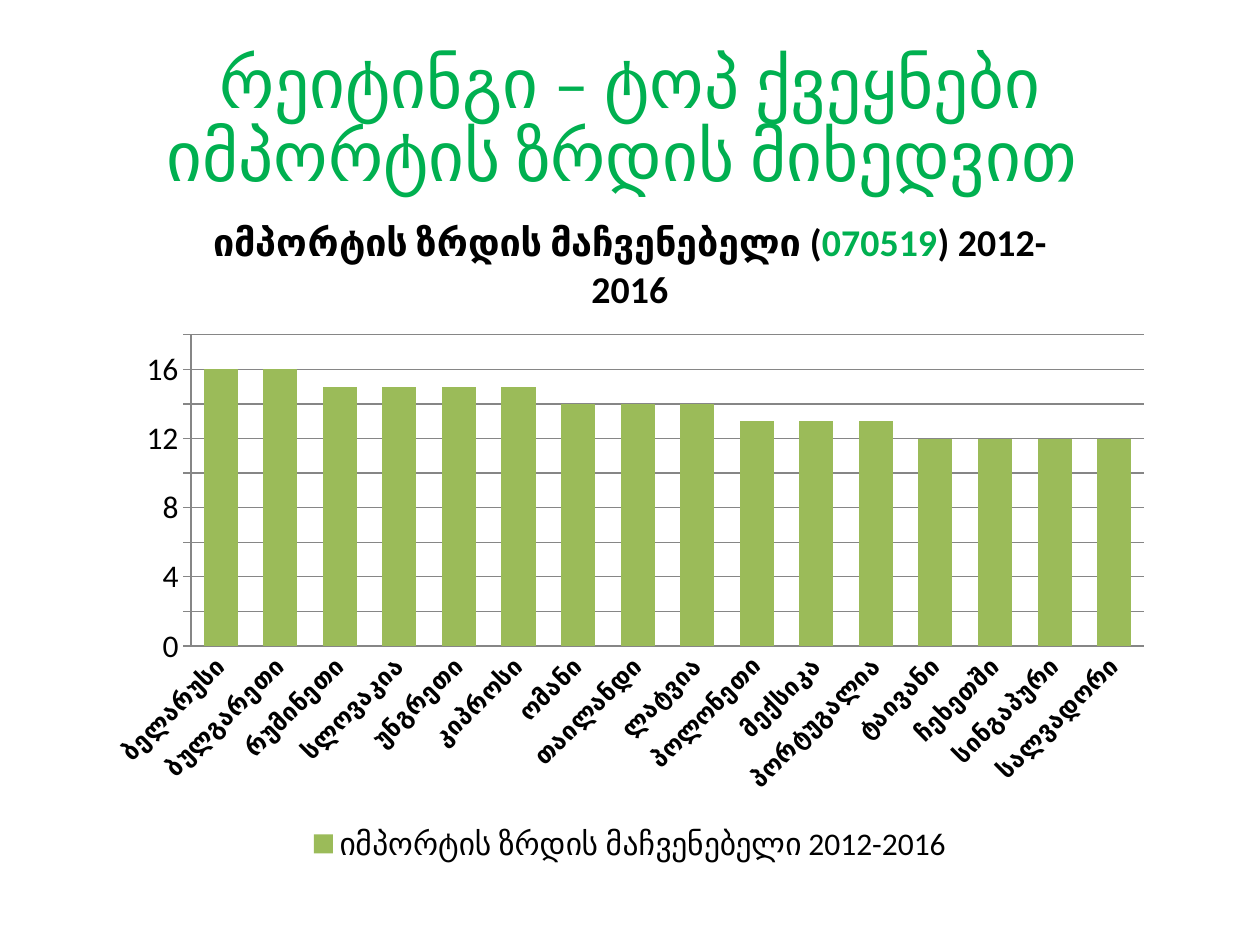
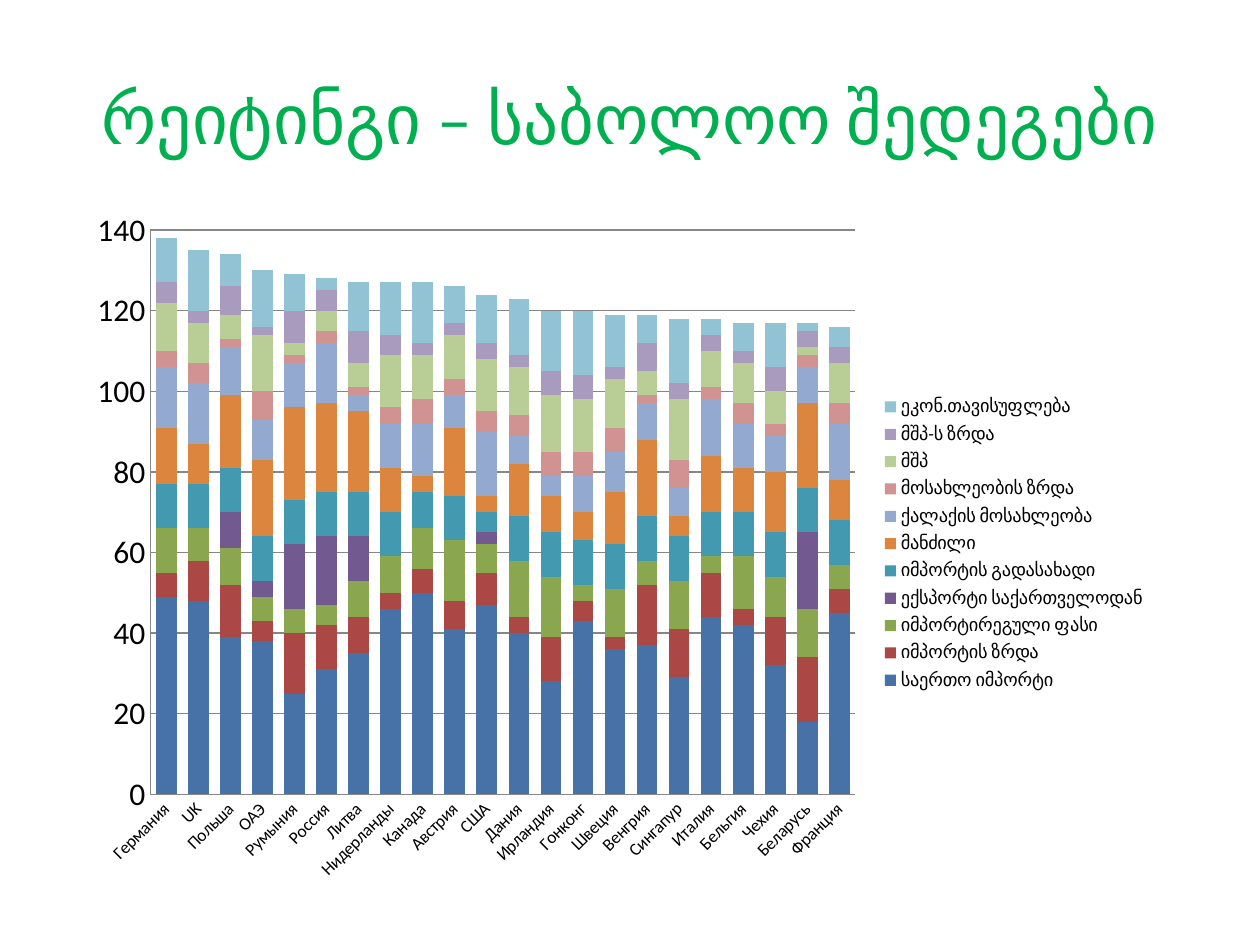
import pptx
import pptx.chart.data
import pptx.dml.color
import pptx.enum.chart
import pptx.enum.text
import pptx.oxml
import pptx.oxml.ns
import pptx.util

Inches, Pt = pptx.util.Inches, pptx.util.Pt
RGBColor = pptx.dml.color.RGBColor
ChartType = pptx.enum.chart.XL_CHART_TYPE
LegendPosition = pptx.enum.chart.XL_LEGEND_POSITION
TickMark = pptx.enum.chart.XL_TICK_MARK

# Shared look
FONT = "Calibri"
GREEN = RGBColor(0x00, 0xB0, 0x50)
BLACK = RGBColor(0x00, 0x00, 0x00)
GRID = RGBColor(0x86, 0x86, 0x86)
OLIVE = RGBColor(0x9B, 0xBB, 0x59)
SCORE_COLORS = [RGBColor.from_string(code) for code in (
    "4672A8", "AB4744", "8AA64F", "725990", "4299B0", "DC853E",
    "93A9CF", "D19392", "B9CD96", "A99BBD", "91C3D5")]

# Rankings list countries from the top score down; each "/" is one point less.

# Import growth content
GROWTH_HEADING = "რეიტინგი – ტოპ ქვეყნები იმპორტის ზრდის მიხედვით "
GROWTH_CAPTION = [("იმპორტის ზრდის მაჩვენებელი (", BLACK), ("070519", GREEN),
                  (") 2012-2016", BLACK)]
GROWTH_NAME = "იმპორტის ზრდის მაჩვენებელი 2012-2016"
GROWTH_TOP = 16
GROWTH_RANKING = (
    "ბელარუსი ბულგარეთი/რუმინეთი სლოვაკია უნგრეთი კიპროსი/ომანი თაილანდი ლატვია/"
    "პოლონეთი მექსიკა პორტუგალია/ტაივანი ჩეხეთში სინგაპური სალვადორი")

# Final results content
RESULTS_HEADING = "რეიტინგი – საბოლოო შედეგები"
RESULT_COUNTRIES = (
    "Германия UK Польша ОАЭ Румыния Россия Литва Нидерланды Канада Австрия США "
    "Дания Ирландия Гонконг Швеция Венгрия Сингапур Италия Бельгия Чехия "
    "Беларусь Франция").split()
# Criterion, top score, ranking, score of unranked countries
CRITERIA = [
    ("საერთო იმპორტი", 50,
     "Канада/Германия/UK/США/Нидерланды/Франция/Италия/Гонконг/Бельгия/Австрия/"
     "Дания/Польша/ОАЭ/Венгрия/Швеция/Литва///Чехия/Россия//Сингапур/Ирландия///"
     "Румыния///////Беларусь", 0),
    ("იმპორტის ზრდა", 16,
     "Беларусь/Румыния Венгрия//Польша/Сингапур Чехия/Россия Ирландия Италия/UK/"
     "Литва/США/Австрия/Германия Канада Франция/ОАЭ Гонконг/"
     "Нидерланды Дания Бельгия/Швеция", 0),
    ("იმპორტირეგული ფასი", 15,
     "Австрия Ирландия/Дания/Бельгия/Швеция Сингапур Беларусь/Германия/"
     "Канада Чехия/Польша Литва Нидерланды/UK/США/ОАЭ Румыния Венгрия Франция/"
     "Россия/Гонконг Италия", 0),
    ("ექსპორტი საქართველოდან", 19,
     "Беларусь//Россия/Румыния/////Литва//Польша/////ОАЭ/США", 0),
    ("იმპორტის გადასახადი", 9, "Канада////США", 11),
    ("მანძილი", 23,
     "Румыния/Россия/Беларусь/Литва/ОАЭ Венгрия/Польша/Австрия//Чехия/"
     "Германия Италия/Дания Швеция//Нидерланды Бельгия/UK Франция/Ирландия//"
     "Гонконг//Сингапур/Канада США", 0),
    ("ქალაქის მოსახლეობა", 16,
     "США/Германия UK Россия/Италия Франция/Канада/Польша/"
     "Румыния Нидерланды Бельгия/ОАЭ Швеция/Гонконг Венгрия Чехия Беларусь/"
     "Австрия/Дания Сингапур//Ирландия/Литва", 0),
    ("მოსახლეობის ზრდა", 7,
     "ОАЭ Сингапур/Канада Ирландия Гонконг Швеция/UK США Дания Бельгия Франция/"
     "Германия Нидерланды Австрия/Россия Италия Чехия Беларусь/"
     "Польша Румыния Литва Венгрия", 0),
    ("მშპ", 15,
     "Сингапур/ОАЭ Ирландия/Нидерланды США Гонконг/Германия Дания Швеция/"
     "Канада Австрия/UK Бельгия Франция/Италия/Чехия//Польша Литва Венгрия/"
     "Россия//Румыния/Беларусь", 0),
    ("მშპ-ს ზრდა", 8,
     "Румыния Литва/Польша Венгрия/Ирландия Гонконг Чехия/"
     "Германия Россия Нидерланды/США Сингапур Италия Беларусь Франция/"
     "UK Канада Австрия Дания Швеция Бельгия/ОАЭ", 0),
    ("ეკონ.თავისუფლება", 16,
     "Гонконг Сингапур/UK Канада Ирландия/ОАЭ Дания/Нидерланды Швеция/Литва США/"
     "Германия Чехия//Румыния Австрия/Польша/Венгрия Бельгия//Франция/Италия/"
     "Россия/Беларусь", 0),
]


def score_ranking(top, ranking):
    """Map each ranked country to its score, one point less per tier."""
    return {country: top - tier
            for tier, countries in enumerate(ranking.split("/"))
            for country in countries.split()}


def style_font(font, size, color=BLACK, bold=False):
    font.name, font.size, font.bold = FONT, Pt(size), bold
    font.color.rgb = color


def write_text(frame, pieces, size, bold=False, line_spacing=None):
    """Fill a text frame with one centred paragraph of (text, color) pieces."""
    paragraph = frame.paragraphs[0]
    paragraph.alignment = pptx.enum.text.PP_ALIGN.CENTER
    if line_spacing:
        paragraph.line_spacing = line_spacing
    for text, color in pieces:
        run = paragraph.add_run()
        run.text = text
        style_font(run.font, size, color, bold)


def add_heading(slide, text, line_spacing=None, margin_top=0.05):
    heading = slide.shapes.add_textbox(Inches(0.5), Inches(0.3), Inches(9), Inches(1.25))
    frame = heading.text_frame
    frame.word_wrap = True
    frame.margin_top = Inches(margin_top)
    frame.vertical_anchor = pptx.enum.text.MSO_ANCHOR.MIDDLE
    write_text(frame, [(text, GREEN)], size=39.6, line_spacing=line_spacing)


def set_plot_area(chart, fractions):
    """Place the inner plot area by x, y, w, h fractions of the chart."""
    parts = "".join(f'<c:{edge}Mode val="edge"/>' for edge in "xy")
    parts += "".join(f'<c:{key} val="{value}"/>' for key, value in zip("xywh", fractions))
    layout = pptx.oxml.parse_xml(
        f'<c:layout {pptx.oxml.ns.nsdecls("c")}><c:manualLayout>'
        f'<c:layoutTarget val="inner"/>{parts}</c:manualLayout></c:layout>')
    plot_area = chart.plots[0]._element.getparent()
    for automatic in plot_area.findall(pptx.oxml.ns.qn("c:layout")):
        plot_area.remove(automatic)
    plot_area.insert(0, layout)


def add_column_chart(slide, kind, box, countries, series, colors, gap, plot_area,
                     top_value, step, tick, country_size, country_bold,
                     legend_position, legend_size):
    data = pptx.chart.data.CategoryChartData(number_format="0")
    data.categories = countries
    for name, values in series.items():
        data.add_series(name, values)
    chart = slide.shapes.add_chart(kind, *map(Inches, box), data).chart
    style_font(chart.font, 18)
    chart.has_title = False

    # Columns
    plot = chart.plots[0]
    plot.vary_by_categories = False
    plot.gap_width = gap
    if kind == ChartType.COLUMN_STACKED:
        plot.overlap = 100
    for column, color in zip(plot.series, colors):
        column.format.fill.solid()
        column.format.fill.fore_color.rgb = color
        column.invert_if_negative = False
    set_plot_area(chart, plot_area)

    # Axes
    country_axis, value_axis = chart.category_axis, chart.value_axis
    value_axis.minimum_scale, value_axis.maximum_scale = 0, top_value
    value_axis.major_unit = step
    value_axis.has_major_gridlines = True
    value_axis.tick_labels.number_format = "0"
    value_axis.tick_labels.number_format_is_linked = False
    style_font(value_axis.tick_labels.font, 18)
    style_font(country_axis.tick_labels.font, country_size, bold=country_bold)
    label_body = country_axis._element.find(".//" + pptx.oxml.ns.qn("a:bodyPr"))
    label_body.set("rot", str(-45 * 60000))
    value_axis.major_tick_mark, country_axis.major_tick_mark = tick, TickMark.NONE
    for lined in (value_axis, country_axis, value_axis.major_gridlines):
        lined.format.line.color.rgb = GRID
        lined.format.line.width = Pt(0.75)

    # Legend
    chart.has_legend = True
    chart.legend.position = legend_position
    chart.legend.include_in_layout = False
    style_font(chart.legend.font, legend_size)
    return chart


def main():
    deck = pptx.Presentation()
    deck.slide_width, deck.slide_height = Inches(10), Inches(7.5)
    blank = deck.slide_layouts[6]

    # Import growth ranking
    growth = deck.slides.add_slide(blank)
    add_heading(growth, GROWTH_HEADING, line_spacing=0.88, margin_top=0.15)
    growth_scores = score_ranking(GROWTH_TOP, GROWTH_RANKING)
    growth_chart = add_column_chart(
        growth, ChartType.COLUMN_CLUSTERED, (0.75, 1.53, 8.5, 5.37),
        list(growth_scores), {GROWTH_NAME: list(growth_scores.values())}, [OLIVE],
        gap=75, plot_area=(0.09, 0.21, 0.89, 0.46), top_value=18, step=2,
        tick=TickMark.OUTSIDE, country_size=14, country_bold=True,
        legend_position=LegendPosition.BOTTOM, legend_size=18)
    growth_chart.has_title = True
    growth_chart.chart_title.include_in_layout = False
    write_text(growth_chart.chart_title.text_frame, GROWTH_CAPTION, size=21.6, bold=True)

    # Final results
    results = deck.slides.add_slide(blank)
    add_heading(results, RESULTS_HEADING)
    result_series = {}
    for criterion, top, ranking, unranked in CRITERIA:
        scores = score_ranking(top, ranking)
        result_series[criterion] = [scores.get(country, unranked)
                                    for country in RESULT_COUNTRIES]
    add_column_chart(
        results, ChartType.COLUMN_STACKED, (0.59, 1.55, 8.61, 5.53),
        RESULT_COUNTRIES, result_series, SCORE_COLORS, gap=55,
        plot_area=(0.07, 0.05, 0.65, 0.81), top_value=140, step=20,
        tick=TickMark.NONE, country_size=10, country_bold=False,
        legend_position=LegendPosition.RIGHT, legend_size=10.5)

    deck.save("out.pptx")


if __name__ == "__main__":
    main()
